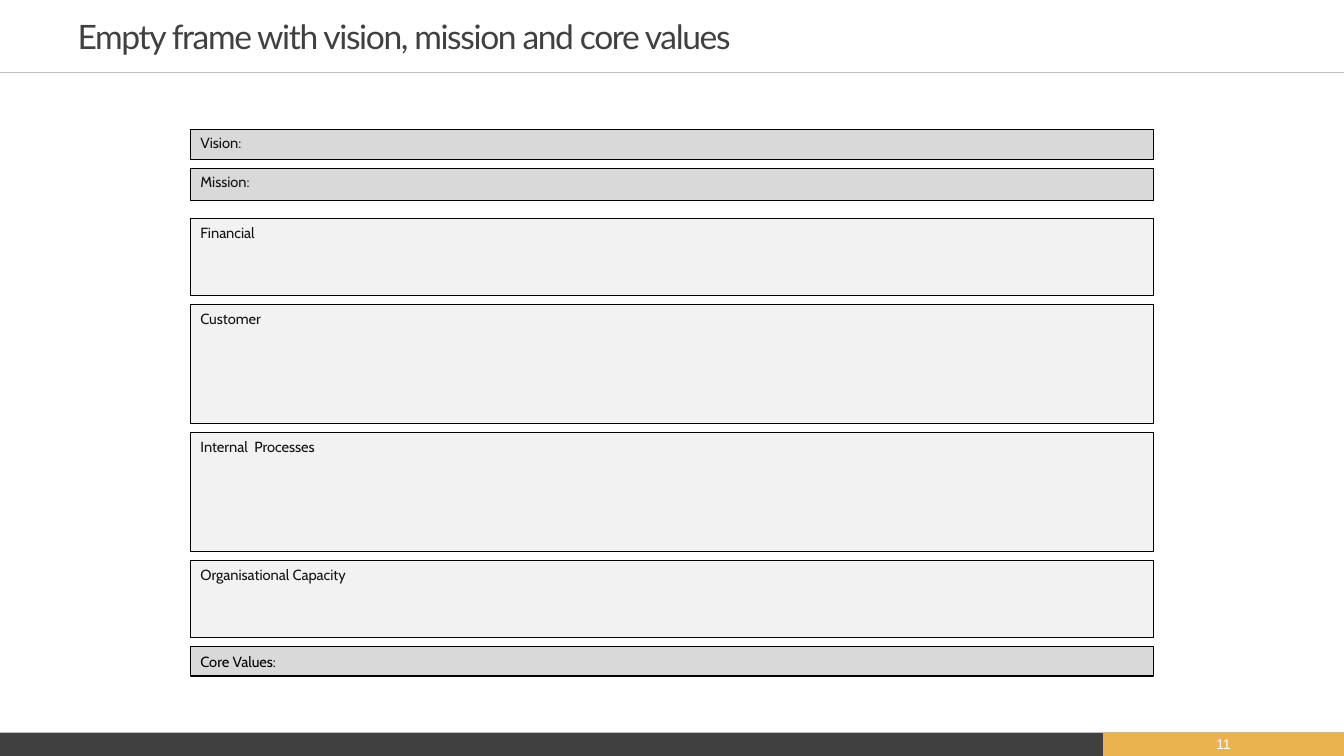
from pptx import Presentation
from pptx.dml.color import RGBColor
from pptx.enum.shapes import MSO_CONNECTOR, MSO_SHAPE
from pptx.enum.text import MSO_ANCHOR as ANCHOR, PP_ALIGN as ALIGN
from pptx.oxml import parse_xml
from pptx.oxml.ns import nsdecls
from pptx.util import Inches, Pt


def rgb(value):
    return RGBColor.from_string(value)


class FrameSlide:
    DARK, RULE, GOLD, WHITE = "404040", "BFBFBF", "EBB250", "FFFFFF"
    HEADER, BODY, INK, BLACK = "D9D9D9", "F2F2F2", "131313", "000000"

    def __init__(self, prs):
        self.col = prs.slide_width / 100
        self.row = prs.slide_height / 100
        self.s = prs.slides.add_slide(prs.slide_layouts[5])

    def place(self, x, y, w, h):
        return (round(x * self.col), round(y * self.row),
                round(w * self.col), round(h * self.row))

    def label(self, sp, text, size, font, color, align=ALIGN.LEFT,
              anchor=ANCHOR.TOP, margins=(0.1, 0.05)):
        tf = sp.text_frame
        tf.text = text
        tf.word_wrap = True
        tf.vertical_anchor = anchor
        tf.margin_left = tf.margin_right = Inches(margins[0])
        tf.margin_top = tf.margin_bottom = Inches(margins[1])
        p = tf.paragraphs[0]
        p.alignment = align
        r = p.runs[0]
        r.font.size = Pt(size)
        r.font.name = font
        r.font.color.rgb = rgb(color)
        return r

    def title(self, text, x, y, w, h):
        sp = self.s.shapes.title
        sp.left, sp.top, sp.width, sp.height = self.place(x, y, w, h)
        r = self.label(sp, text, 24, "Lato", self.DARK,
                       anchor=ANCHOR.MIDDLE, margins=(0.1, 0))
        r.font._element.set("spc", "-100")

    def rule(self, y):
        x1, y1, w, _ = self.place(0, y, 100, 0)
        line = self.s.shapes.add_connector(MSO_CONNECTOR.STRAIGHT, x1, y1, x1 + w, y1)
        line.line.color.rgb = rgb(self.RULE)
        line.line.width = Pt(1)
        line._element.spPr.append(parse_xml(f"<a:effectLst {nsdecls('a')}/>"))

    def bar(self, x, y, w, h, fill, outline=0):
        sp = self.s.shapes.add_shape(MSO_SHAPE.RECTANGLE, *self.place(x, y, w, h))
        sp.shadow.inherit = False
        sp.fill.solid()
        sp.fill.fore_color.rgb = rgb(fill)
        if outline:
            sp.line.color.rgb = rgb(self.BLACK)
            sp.line.width = Pt(outline)
        else:
            sp.line.fill.background()
        return sp

    def band(self, text, y, h, fill, outline, color, anchor):
        sp = self.bar(14.18, y, 71.64, h, fill, outline)
        self.label(sp, text, 10.5, "Cabin", color, anchor=anchor)

    def number(self, text, x, y, w, h):
        sp = self.s.shapes.add_textbox(*self.place(x, y, w, h))
        self.label(sp, text, 10, "Arial", self.WHITE, ALIGN.CENTER, ANCHOR.MIDDLE, (0, 0))


def main():
    prs = Presentation()
    prs.slide_width, prs.slide_height = Inches(13.33), Inches(7.5)
    s = FrameSlide(prs)

    s.bar(0, 96.9, 100, 3.1, s.DARK)
    s.rule(9.6)
    s.bar(82.07, 96.9, 17.93, 3.1, s.GOLD)
    s.number("11", 82.07, 96.8, 17.93, 3.3)
    s.title("Empty frame with vision, mission and core values", 5.03, 0.53, 72.92, 8.4)

    header = (s.HEADER, 0.5, s.INK, ANCHOR.TOP)
    body = (s.BODY, 0.5, s.INK, ANCHOR.TOP)
    footer = (s.HEADER, 1, s.BLACK, ANCHOR.MIDDLE)
    bands = [
        ("Vision:", 4, 1.2, header),
        ("Mission:", 4.27, 2.4, header),
        ("Financial", 10.13, 1.25, body),
        ("Customer", 15.67, 1.25, body),
        ("Internal  Processes", 15.67, 1.25, body),
        ("Organisational Capacity", 10.13, 1.25, body),
        ("Core Values:", 3.87, 0, footer),
    ]
    y = 17.07
    for text, h, gap, style in bands:
        s.band(text, y, h, *style)
        y += h + gap

    prs.save("out.pptx")


if __name__ == "__main__":
    main()
